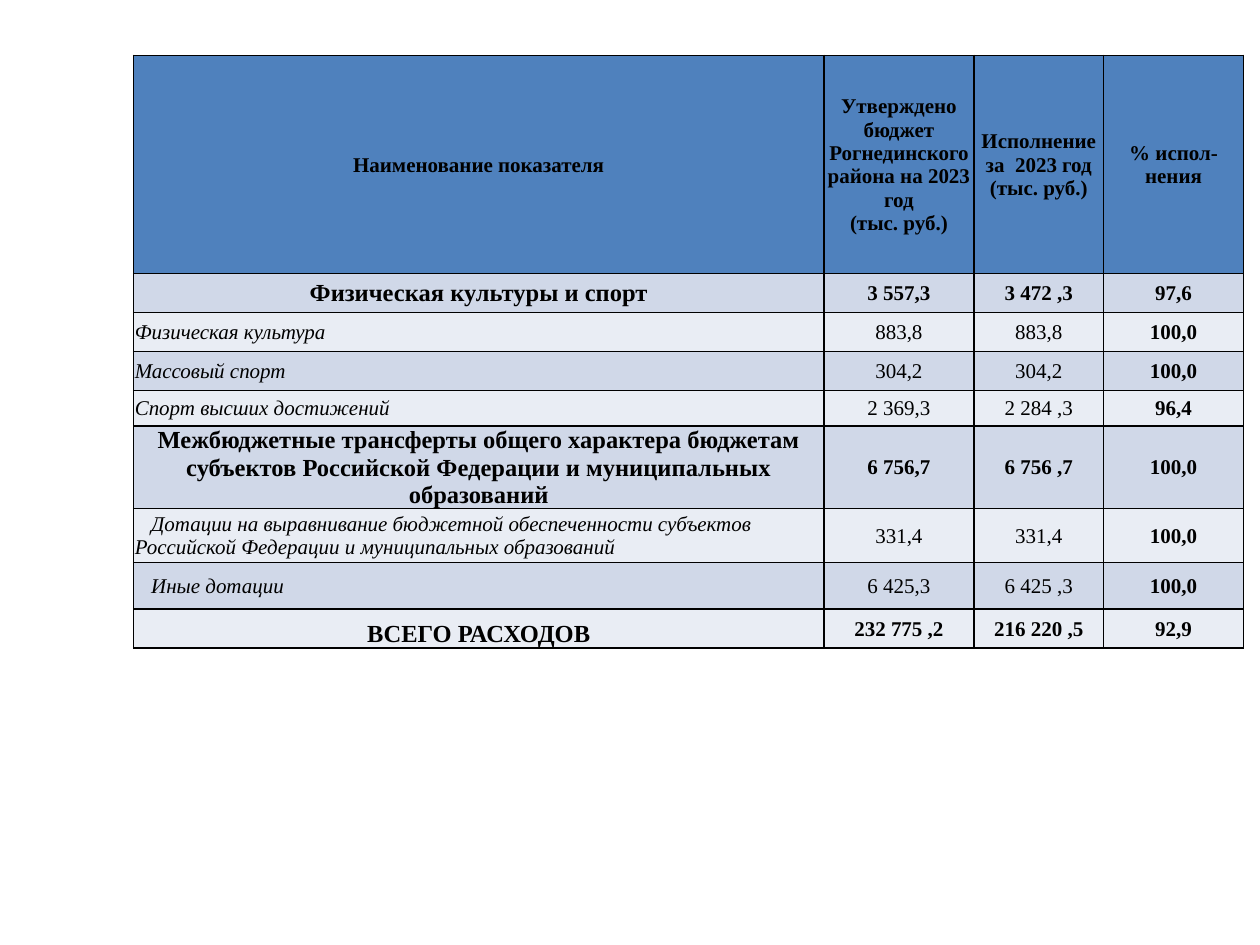
from dataclasses import dataclass

from lxml import etree
from pptx import Presentation
from pptx.dml.color import RGBColor
from pptx.enum.text import MSO_ANCHOR, PP_ALIGN
from pptx.oxml.ns import qn
from pptx.util import Inches, Pt

CENTER, LEFT = PP_ALIGN.CENTER, PP_ALIGN.LEFT
MIDDLE, BOTTOM = MSO_ANCHOR.MIDDLE, MSO_ANCHOR.BOTTOM

COLORS = {"header": "4F81BD", "odd": "D0D8E8", "even": "E9EDF4", "ink": "000000"}
FONT = "Times New Roman"
COL_WIDTHS = (5.48, 1.19, 1.03, 1.11)
MARGINS = {"margin_left": Inches(0.01), "margin_right": Inches(0.01),
           "margin_top": Inches(0.01), "margin_bottom": 0}


@dataclass
class BudgetRow:
    height: float
    texts: tuple[str, ...]
    kind: str = "item"  # header, section or item
    indent: float = 0
    name_anchor: MSO_ANCHOR = MIDDLE


ROWS = [
    BudgetRow(1.73, ("Наименование показателя",
                     "Утверждено бюджет Рогнединского района на 2023 год\v(тыс. руб.)",
                     "Исполнение за  2023 год (тыс. руб.)", "% испол-нения"), "header"),
    BudgetRow(0.31, ("Физическая культуры и спорт", "3 557,3", "3 472 ,3", "97,6"),
              "section"),
    BudgetRow(0.31, ("Физическая культура", "883,8", "883,8", "100,0")),
    BudgetRow(0.31, ("Массовый спорт", "304,2", "304,2", "100,0")),
    BudgetRow(0.28, ("Спорт высших достижений", "2 369,3", "2 284 ,3", "96,4")),
    BudgetRow(0.65, ("Межбюджетные трансферты общего характера бюджетам субъектов "
                     "Российской Федерации и муниципальных образований",
                     "6 756,7", "6 756 ,7", "100,0"), "section"),
    BudgetRow(0.43, ("Дотации на выравнивание бюджетной обеспеченности субъектов "
                     "Российской Федерации и муниципальных образований",
                     "331,4", "331,4", "100,0"), indent=0.13),
    BudgetRow(0.37, ("Иные дотации", "6 425,3", "6 425 ,3", "100,0"), indent=0.13),
    BudgetRow(0.31, ("ВСЕГО РАСХОДОВ", "232 775 ,2", "216 220 ,5", "92,9"),
              "section", name_anchor=BOTTOM),
]


def set_borders(cell) -> None:
    tc_pr = cell._tc.get_or_add_tcPr()
    for side in ("lnL", "lnR", "lnT", "lnB"):
        ln = etree.SubElement(tc_pr, qn(f"a:{side}"), w=str(Pt(1)))
        fill = etree.SubElement(ln, qn("a:solidFill"))
        etree.SubElement(fill, qn("a:srgbClr"), val=COLORS["ink"])


def fill_cell(cell, row: BudgetRow, col: int, color: str) -> None:
    is_name = col == 0
    is_item = row.kind == "item"
    set_borders(cell)
    cell.fill.solid()
    cell.fill.fore_color.rgb = RGBColor.from_string(color)
    for name, value in MARGINS.items():
        setattr(cell, name, value)
    cell.vertical_anchor = row.name_anchor if is_name else MIDDLE

    p = cell.text_frame.paragraphs[0]
    p.text = row.texts[col]
    p.alignment = LEFT if is_name and is_item else CENTER
    if is_name and row.indent:
        p._p.get_or_add_pPr().set("indent", str(Inches(row.indent)))
    font_format = {
        "name": FONT,
        "size": Pt(14 if is_name and row.kind == "section" else 12),
        "bold": not is_item or col == len(COL_WIDTHS) - 1,
        "italic": is_name and is_item,
    }
    for r in p.runs:
        for name, value in font_format.items():
            setattr(r.font, name, value)
        r.font.color.rgb = RGBColor.from_string(COLORS["ink"])


def add_budget_table(s, rows: list[BudgetRow]) -> None:
    table = s.shapes.add_table(
        len(rows), len(COL_WIDTHS), Inches(1.06), Inches(0.44),
        Inches(sum(COL_WIDTHS)), Inches(sum(row.height for row in rows))).table
    for column, width in zip(table.columns, COL_WIDTHS):
        column.width = Inches(width)
    for i, row in enumerate(rows):
        table.rows[i].height = Inches(row.height)
        band = "header" if row.kind == "header" else ("odd" if i % 2 else "even")
        for col in range(len(COL_WIDTHS)):
            fill_cell(table.cell(i, col), row, col, COLORS[band])


def main() -> None:
    prs = Presentation()
    prs.slide_width, prs.slide_height = Inches(10), Inches(7.5)
    s = prs.slides.add_slide(prs.slide_layouts[6])
    # Budget execution table
    add_budget_table(s, ROWS)
    prs.save("out.pptx")


if __name__ == "__main__":
    main()
